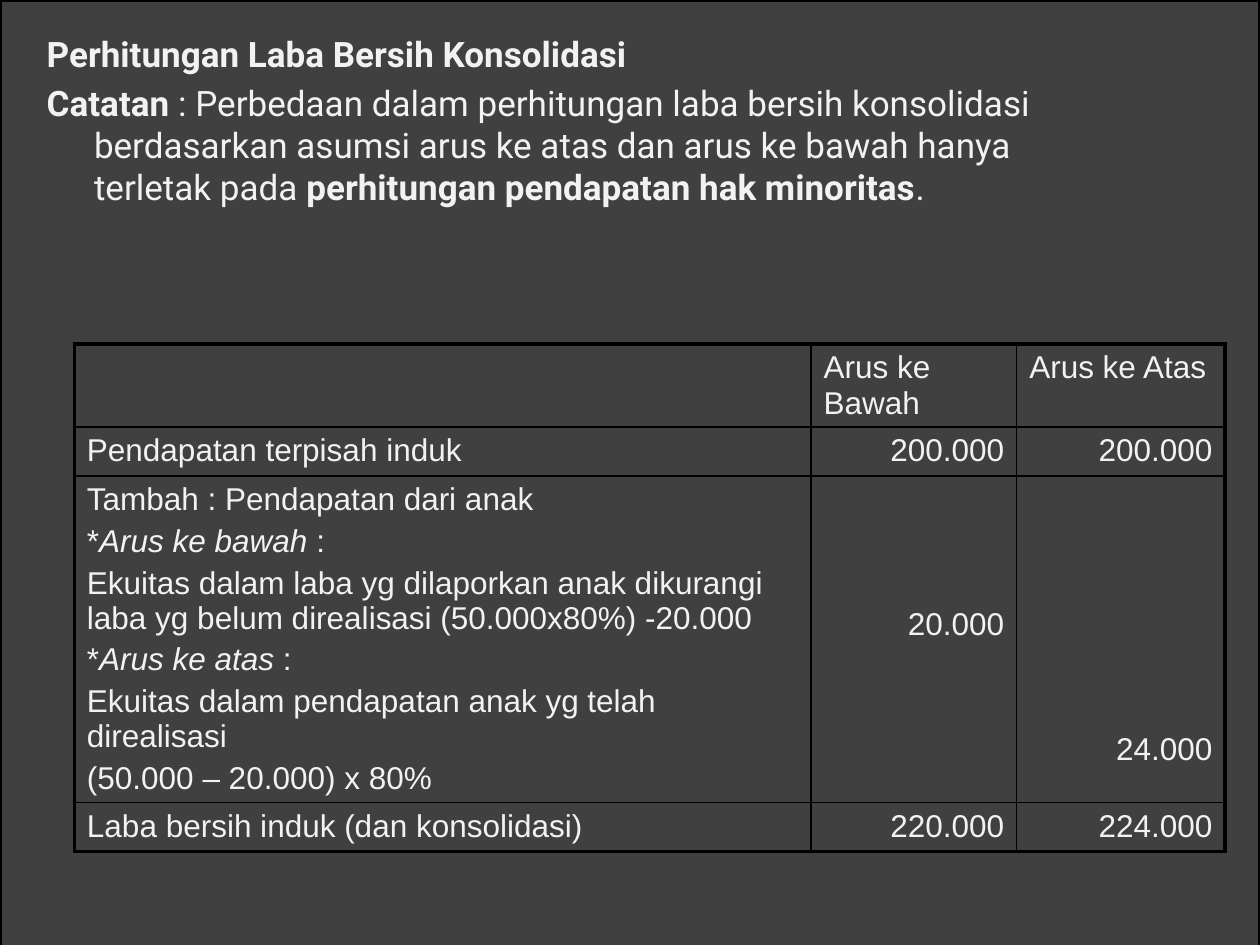
from dataclasses import dataclass

from lxml import etree
from pptx import Presentation
from pptx.dml.color import RGBColor
from pptx.enum.shapes import MSO_SHAPE
from pptx.enum.text import MSO_ANCHOR, MSO_AUTO_SIZE, PP_ALIGN
from pptx.oxml.ns import qn
from pptx.util import Pt

RECTANGLE = MSO_SHAPE.RECTANGLE
LEFT, RIGHT = PP_ALIGN.LEFT, PP_ALIGN.RIGHT
TOP = MSO_ANCHOR.TOP
NO_AUTOFIT = MSO_AUTO_SIZE.NONE

BACKGROUND, BLACK, TEXT = "404040", "000000", "F2F2F2"
THIN, THICK = 1, 2.25
COLUMN_WIDTHS = (421, 117.5, 119)
ROW_HEIGHTS = (47.5, 28, 186, 28)


@dataclass(frozen=True)
class Run:
    text: str
    bold: bool = False
    italic: bool = False


@dataclass(frozen=True)
class Cell:
    paragraphs: tuple[tuple[Run, ...], ...] = ()
    align: PP_ALIGN = LEFT
    top_margin: float = 3.6


def color(value: str) -> RGBColor:
    return RGBColor.from_string(value)


def label(text: str) -> Cell:
    return Cell(((Run(text),),))


def amount(text: str, top_margin: float = 3.6) -> Cell:
    return Cell(((Run(text),),), RIGHT, top_margin)


def write_run(paragraph, text: str, *, font: str, size: float,
              bold: bool = False, italic: bool = False) -> None:
    run = paragraph.add_run()
    run.text = text
    run.font.name = font
    run.font.size = Pt(size)
    run.font.bold = bold
    run.font.italic = italic
    run.font.color.rgb = color(TEXT)


def write_paragraphs(frame, paragraphs, *, font: str, size: float,
                     space: float, align: PP_ALIGN = LEFT) -> list:
    for index, runs in enumerate(paragraphs):
        paragraph = frame.add_paragraph() if index else frame.paragraphs[0]
        paragraph.alignment = align
        paragraph.space_before = Pt(space if index else 0)
        for run in runs:
            write_run(paragraph, run.text, font=font, size=size,
                      bold=run.bold, italic=run.italic)
    return list(frame.paragraphs)


def add_border(cell, side: str, width: float) -> None:
    properties = cell._tc.get_or_add_tcPr()
    line = etree.SubElement(properties, qn(f"a:ln{side}"), w=str(Pt(width)))
    fill = etree.SubElement(line, qn("a:solidFill"))
    etree.SubElement(fill, qn("a:srgbClr"), val=BLACK)


def draw_background(slide) -> None:
    panel = slide.shapes.add_shape(RECTANGLE, 0, 0, Pt(720), Pt(558))
    panel.shadow.inherit = False
    panel.fill.solid()
    panel.fill.fore_color.rgb = color(BACKGROUND)
    panel.line.color.rgb = color(BLACK)
    panel.line.width = Pt(2)
    # Send the panel behind the placeholders
    slide.shapes._spTree.insert(2, panel._element)


def draw_note(body) -> None:
    body.left, body.top, body.width, body.height = Pt(19.5), Pt(15), Pt(613.5), Pt(158.5)
    frame = body.text_frame
    frame.auto_size = NO_AUTOFIT
    frame.vertical_anchor = TOP
    paragraphs = write_paragraphs(frame, NOTE, font="Roboto", size=20, space=4)
    for paragraph in paragraphs:
        properties = paragraph._p.get_or_add_pPr()
        properties.set("marL", str(Pt(27)))
        properties.set("indent", str(Pt(-27)))
        etree.SubElement(properties, qn("a:buNone"))


def draw_table(slide, rows) -> None:
    row_count, column_count = len(ROW_HEIGHTS), len(COLUMN_WIDTHS)
    table = slide.shapes.add_table(
        row_count, column_count, Pt(42.5), Pt(196.5),
        Pt(sum(COLUMN_WIDTHS)), Pt(sum(ROW_HEIGHTS))).table
    table.first_row = table.horz_banding = False
    for column, width in zip(table.columns, COLUMN_WIDTHS):
        column.width = Pt(width)
    for row, height in zip(table.rows, ROW_HEIGHTS):
        row.height = Pt(height)

    for row_index, row in enumerate(rows):
        for column_index, content in enumerate(row):
            cell = table.cell(row_index, column_index)
            cell.margin_top = Pt(content.top_margin)
            write_paragraphs(cell.text_frame, content.paragraphs, font="Arial",
                             size=18, space=3.6, align=content.align)
            # Thick outer frame, thin inner lines
            outer_sides = {
                "L": column_index == 0,
                "R": column_index == column_count - 1,
                "T": row_index == 0,
                "B": row_index == row_count - 1,
            }
            for side, is_outer in outer_sides.items():
                add_border(cell, side, THICK if is_outer else THIN)
            cell.fill.background()


NOTE = (
    (Run("Perhitungan Laba Bersih Konsolidasi", bold=True),),
    (
        Run("Catatan", bold=True),
        Run(" : Perbedaan dalam perhitungan laba bersih konsolidasi berdasarkan "
            "asumsi arus ke atas dan arus ke bawah hanya terletak pada "),
        Run("perhitungan pendapatan hak minoritas", bold=True),
        Run("."),
    ),
)

SUBSIDIARY_INCOME = Cell((
    (Run("Tambah : Pendapatan dari anak"),),
    (Run("*"), Run("Arus ke bawah", italic=True), Run(" :")),
    (Run("Ekuitas dalam laba yg dilaporkan anak dikurangi laba yg belum "
         "direalisasi (50.000x80%) -20.000"),),
    (Run("*"), Run("Arus ke atas", italic=True), Run(" :")),
    (Run("Ekuitas dalam pendapatan anak yg telah direalisasi"),),
    (Run("(50.000 – 20.000) x 80%"),),
))

ROWS = (
    (Cell(), label("Arus ke Bawah"), label("Arus ke Atas")),
    (label("Pendapatan terpisah induk"), amount("200.000"), amount("200.000")),
    # Amounts sit beside the lines that explain them
    (SUBSIDIARY_INCOME, amount("20.000", 75), amount("24.000", 146)),
    (label("Laba bersih induk (dan konsolidasi)"), amount("220.000"), amount("224.000")),
)


def main() -> None:
    presentation = Presentation()
    presentation.slide_width, presentation.slide_height = Pt(720), Pt(540)
    slide = presentation.slides.add_slide(presentation.slide_layouts[1])

    # The heading belongs to the body text, so the title is not needed
    title = slide.shapes.title._element
    title.getparent().remove(title)

    draw_background(slide)
    draw_note(slide.placeholders[1])
    draw_table(slide, ROWS)
    presentation.save("out.pptx")


if __name__ == "__main__":
    main()
